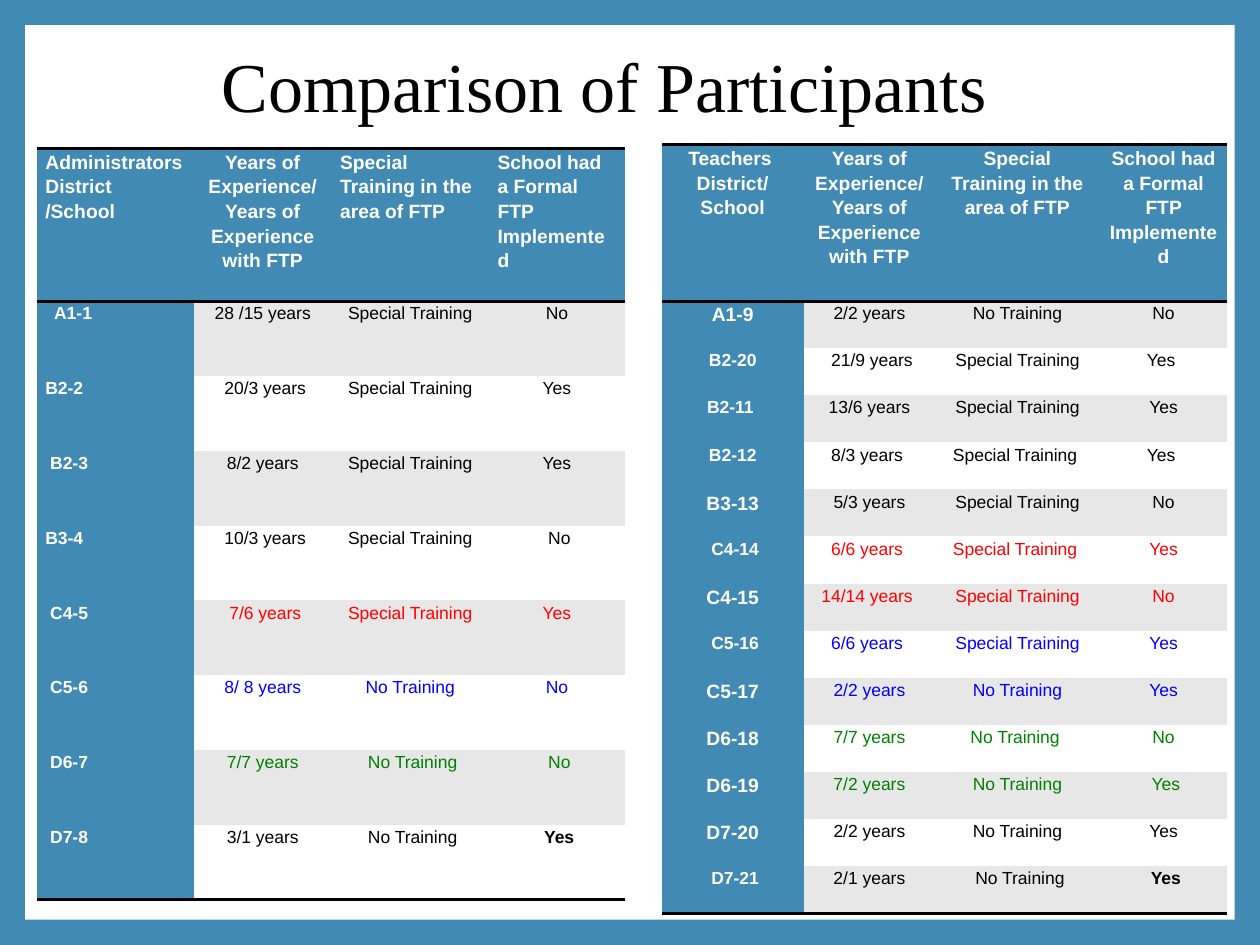
from lxml import etree
from pptx import Presentation
from pptx.dml.color import RGBColor
from pptx.enum.shapes import MSO_SHAPE
from pptx.enum.text import MSO_ANCHOR, PP_ALIGN
from pptx.oxml.ns import qn
from pptx.util import Inches, Pt

RECTANGLE = MSO_SHAPE.RECTANGLE
MIDDLE = MSO_ANCHOR.MIDDLE
LEFT, CENTER = PP_ALIGN.LEFT, PP_ALIGN.CENTER

WIDTH, HEIGHT, FRAME = 10, 7.5, 0.2
BLUE, WHITE, GREY, BLACK = "418AB3", "FFFFFF", "E7E7E7", "000000"
SCHOOL_COLORS = {"C4": "FF0000", "C5": "0000FF", "D6": "008000"}
PLAIN_STYLE = "{2D5ABB26-0587-4C30-8999-92F81FD0307C}"
CELL_INSET = 0.07

TITLE = "Comparison of Participants"
YEARS = "Years of Experience/Years of Experience with FTP"
TRAINING = "Special Training in the area of FTP"
FORMAL = "School had a Formal FTP Implemented"

ADMINISTRATORS = {
    "place": (0.29, 1.18, 5.96),
    "columns": (1.25, 1.09, 1.25, 1.08),
    "header_height": 1.21,
    "header": ("Administrators\nDistrict /School", YEARS, TRAINING, FORMAL),
    "header_aligns": (LEFT, CENTER, LEFT, LEFT),
    "label_align": LEFT,
    "large_labels": (),
    "indented_labels": ("A1-1",),
    "rows": [
        ("A1-1", "28 /15 years", "Special Training", "No"),
        ("B2-2", " 20/3 years", "Special Training", "Yes"),
        (" B2-3", "8/2 years", "Special Training", "Yes"),
        ("B3-4", " 10/3 years", "Special Training", " No"),
        (" C4-5", " 7/6 years", "Special Training", "Yes"),
        (" C5-6", "8/ 8 years", "No Training", "No"),
        (" D6-7", "7/7 years", " No Training", " No"),
        (" D7-8", "3/1 years", " No Training", " Yes"),
    ],
}
TEACHERS = {
    "place": (5.25, 1.15, 6.1),
    "columns": (1.13, 1.04, 1.31, 1.01),
    "header_height": 1.24,
    "header": ("Teachers \nDistrict/School", YEARS, TRAINING, FORMAL),
    "header_aligns": (CENTER,) * 4,
    "label_align": CENTER,
    "large_labels": ("A1-9", "B3-13", "C4-15", "C5-17", "D6-18", "D6-19", "D7-20"),
    "indented_labels": (),
    "rows": [
        ("A1-9", "2/2 years", "No Training", "No"),
        ("B2-20", " 21/9 years", "Special Training", "Yes "),
        ("B2-11 ", " 13/6 years ", "Special Training", "Yes"),
        ("B2-12", "8/3 years ", "Special Training ", "Yes "),
        ("B3-13", "5/3 years", "Special Training", "No"),
        (" C4-14", "6/6 years ", "Special Training ", "Yes"),
        ("C4-15", "14/14 years ", "Special Training", "No"),
        (" C5-16", "6/6 years ", "Special Training", "Yes"),
        ("C5-17", "2/2 years", "No Training", "Yes"),
        ("D6-18", "7/7 years", "No Training ", "No"),
        ("D6-19", " 7/2 years ", "No Training", " Yes"),
        ("D7-20", "2/2 years", "No Training", "Yes"),
        (" D7-21", " 2/1 years ", " No Training", " Yes"),
    ],
}


def color(value):
    return RGBColor.from_string(value)


def write(frame, text, align, spacing, ink, **font):
    for index, line in enumerate(text.split("\n")):
        para = frame.paragraphs[0] if index == 0 else frame.add_paragraph()
        para.alignment, para.line_spacing = align, spacing
        span = para.add_run()
        span.text = line
        span.font.color.rgb = color(ink)
        for name, value in font.items():
            setattr(span.font, name, value)


def add_borders(cell, sides):
    properties = cell._tc.get_or_add_tcPr()
    for index, side in enumerate(sides):
        line = etree.Element(qn(f"a:ln{side}"), w=str(Pt(2)))
        fill = etree.SubElement(line, qn("a:solidFill"))
        etree.SubElement(fill, qn("a:srgbClr"), val=BLACK)
        properties.insert(index, line)


def fill_cell(cell, text, align, ink, background, size, bold, sides="", indent=0):
    margins = {"left": CELL_INSET + indent, "right": CELL_INSET, "top": 0, "bottom": 0}
    for side, value in margins.items():
        setattr(cell, f"margin_{side}", Inches(value))
    cell.fill.solid()
    cell.fill.fore_color.rgb = color(background)
    write(cell.text_frame, text, align, 1.15, ink, name="Arial", size=Pt(size), bold=bold)
    add_borders(cell, sides)


def add_participants(page, group):
    left, top, height = group["place"]
    rows, columns = group["rows"], group["columns"]
    table = page.shapes.add_table(len(rows) + 1, len(columns), Inches(left), Inches(top),
                                  Inches(sum(columns)), Inches(height)).table
    table.first_row = table.horz_banding = False
    table._tbl.tblPr.find(qn("a:tableStyleId")).text = PLAIN_STYLE
    for column, width in zip(table.columns, columns):
        column.width = Inches(width)
    row_height = (height - group["header_height"]) / len(rows)
    for index, row in enumerate(table.rows):
        row.height = Inches(row_height if index else group["header_height"])
    for column, (text, align) in enumerate(zip(group["header"], group["header_aligns"])):
        fill_cell(table.cell(0, column), text, align, WHITE, BLUE, 11, True, "TB")
    for index, (label, *values) in enumerate(rows, 1):
        last = index == len(rows)
        sides = "B" if last else ""
        size = 11 if label in group["large_labels"] else 10
        indent = CELL_INSET if label in group["indented_labels"] else 0
        fill_cell(table.cell(index, 0), label, group["label_align"], WHITE, BLUE,
                  size, True, sides, indent)
        ink = SCHOOL_COLORS.get(label.strip()[:2], BLACK)
        band = GREY if index % 2 else WHITE
        for column, value in enumerate(values, 1):
            bold = last and column == len(values)
            fill_cell(table.cell(index, column), value, CENTER, ink, band, 10, bold, sides)


def main():
    deck = Presentation()
    deck.slide_width, deck.slide_height = Inches(WIDTH), Inches(HEIGHT)
    page = deck.slides.add_slide(deck.slide_layouts[6])
    page.background.fill.solid()
    page.background.fill.fore_color.rgb = color(BLUE)

    panel = page.shapes.add_shape(RECTANGLE, Inches(FRAME), Inches(FRAME),
                                  Inches(WIDTH - 2 * FRAME), Inches(HEIGHT - 2 * FRAME))
    panel.shadow.inherit = False
    panel.fill.solid()
    panel.fill.fore_color.rgb = color(WHITE)
    panel.line.fill.background()

    box = page.shapes.add_textbox(Inches(1.66), Inches(0.17), Inches(8.3), Inches(1.09))
    box.text_frame.word_wrap = True
    box.text_frame.vertical_anchor = MIDDLE
    write(box.text_frame, TITLE, LEFT, 0.9, BLACK, name="Times New Roman", size=Pt(40))

    for group in (ADMINISTRATORS, TEACHERS):
        add_participants(page, group)
    deck.save("out.pptx")


if __name__ == "__main__":
    main()
